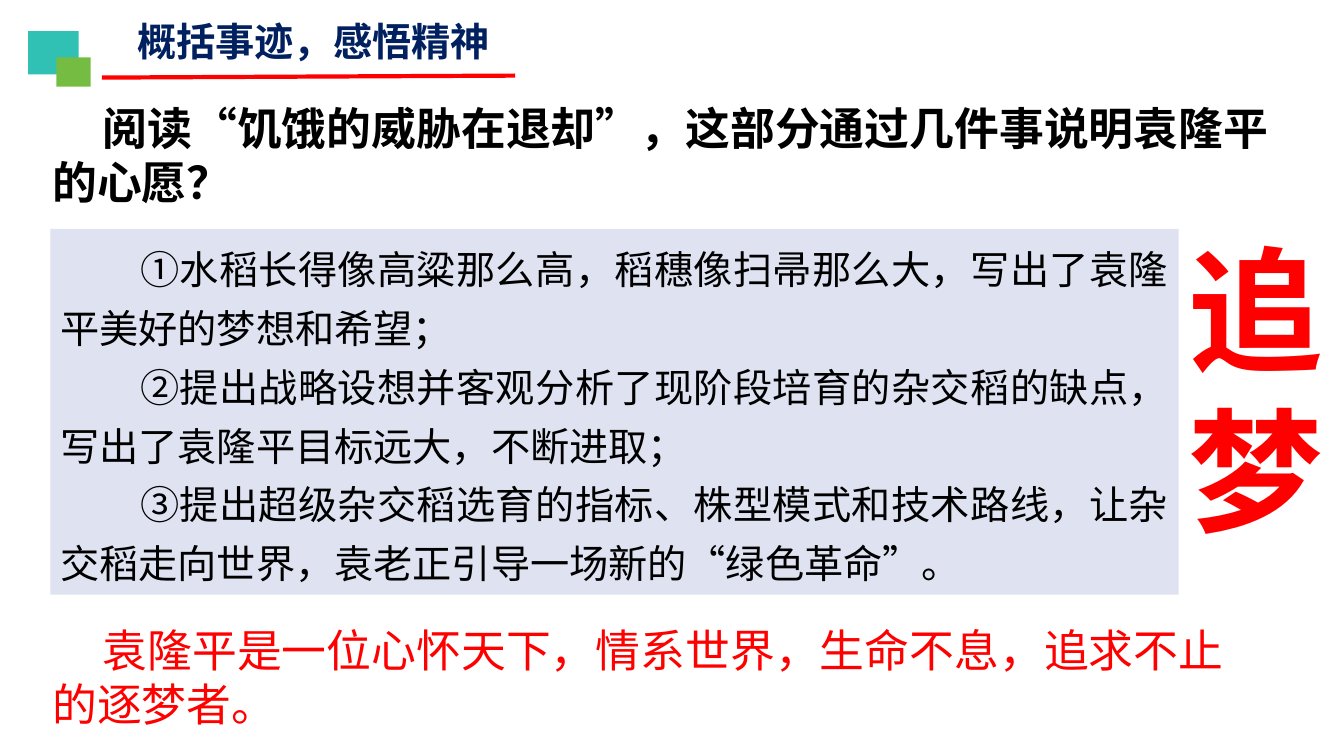
from dataclasses import dataclass

from lxml import etree
from pptx import Presentation
from pptx.dml.color import RGBColor
from pptx.enum.lang import MSO_LANGUAGE_ID
from pptx.enum.shapes import MSO_CONNECTOR, MSO_SHAPE
from pptx.enum.text import MSO_ANCHOR, PP_ALIGN
from pptx.oxml.ns import qn
from pptx.util import Inches, Pt

RECT = MSO_SHAPE.RECTANGLE
STRAIGHT = MSO_CONNECTOR.STRAIGHT
LEFT, CENTER, JUSTIFY = PP_ALIGN.LEFT, PP_ALIGN.CENTER, PP_ALIGN.JUSTIFY
TOP = MSO_ANCHOR.TOP
CHINESE = MSO_LANGUAGE_ID.SIMPLIFIED_CHINESE


@dataclass(frozen=True)
class Theme:
    black: str = "000000"
    red: str = "FF0000"
    navy: str = "002060"
    teal: str = "30C0B4"
    green: str = "75BD42"
    panel: str = "DFE3F1"
    body_font: str = "Noto Sans CJK JP"
    accent_font: str = "Noto Sans CJK SC"
    body: int = 28
    lead: int = 32
    motto: int = 96


THEME = Theme()

ANSWERS = [
    "①水稻长得像高粱那么高，稻穗像扫帚那么大，写出了袁隆平美好的梦想和希望；",
    "②提出战略设想并客观分析了现阶段培育的杂交稻的缺点，写出了袁隆平目标远大，不断进取；",
    "③提出超级杂交稻选育的指标、株型模式和技术路线，让杂交稻走向世界，袁老正引导一场新的“绿色革命”。",
]


def add_block(shapes, box, color):
    sp = shapes.add_shape(RECT, *map(Inches, box))
    sp.shadow.inherit = False
    sp.fill.solid()
    sp.fill.fore_color.rgb = RGBColor.from_string(color)
    sp.line.fill.background()
    return sp


def write(sp, lines, size, font, color, bold=False, align=LEFT, indent=0, spacing=None):
    """Fill a shape with one paragraph per line, all in the same style."""
    tf = sp.text_frame
    tf.word_wrap = True
    tf.vertical_anchor = TOP
    tf.text = "\n".join(lines)
    for p in tf.paragraphs:
        p.alignment = align
        if spacing:
            p.line_spacing = spacing
        if indent:
            p._p.get_or_add_pPr().set("indent", str(Inches(indent)))
        for r in p.runs:
            r.font.size = Pt(size)
            r.font.bold = bold
            r.font.name = font
            r.font.language_id = CHINESE
            r.font.color.rgb = RGBColor.from_string(color)
            east_asian = etree.SubElement(r._r.get_or_add_rPr(), qn("a:ea"))
            east_asian.set("typeface", font)


def add_text(slide, box, text, *style, **options):
    write(slide.shapes.add_textbox(*map(Inches, box)), [text], *style, **options)


def add_rule(slide, start, end, color, width):
    rule = slide.shapes.add_connector(STRAIGHT, *map(Inches, start + end))
    rule.line.color.rgb = RGBColor.from_string(color)
    rule.line.width = Pt(width)
    etree.SubElement(rule._element.spPr, qn("a:effectLst"))


def add_heading(slide):
    add_rule(slide, (1.01, 0.77), (5.11, 0.75), THEME.red, 3)
    squares = slide.shapes.add_group_shape().shapes
    add_block(squares, (0.28, 0.31, 0.5, 0.43), THEME.teal)
    add_block(squares, (0.56, 0.57, 0.34, 0.29), THEME.green)
    add_text(slide, (1.01, 0.12, 4.2, 0.57), "概括事迹，感悟精神",
             THEME.body, THEME.accent_font, THEME.navy, bold=True, align=CENTER)


def main():
    prs = Presentation()
    prs.slide_width, prs.slide_height = Inches(13.33), Inches(7.5)
    slide = prs.slides.add_slide(prs.slide_layouts[6])

    panel = add_block(slide.shapes, (0.5, 2.27, 11.19, 3.63), THEME.panel)
    write(panel, ANSWERS, THEME.body, THEME.body_font, THEME.black,
          align=JUSTIFY, indent=0.79, spacing=1.25)
    add_heading(slide)
    add_text(slide, (0.42, 0.95, 12.56, 1.18),
             "阅读“饥饿的威胁在退却”，这部分通过几件事说明袁隆平的心愿？",
             THEME.lead, THEME.body_font, THEME.black, bold=True, indent=0.5)
    add_text(slide, (0.42, 6.13, 12.09, 1.18),
             "袁隆平是一位心怀天下，情系世界，生命不息，追求不止的逐梦者。",
             THEME.lead, THEME.accent_font, THEME.red, indent=0.5)
    add_text(slide, (11.69, 2.2, 1.49, 3.33), "追梦",
             THEME.motto, THEME.body_font, THEME.red, bold=True)
    prs.save("out.pptx")


if __name__ == "__main__":
    main()
